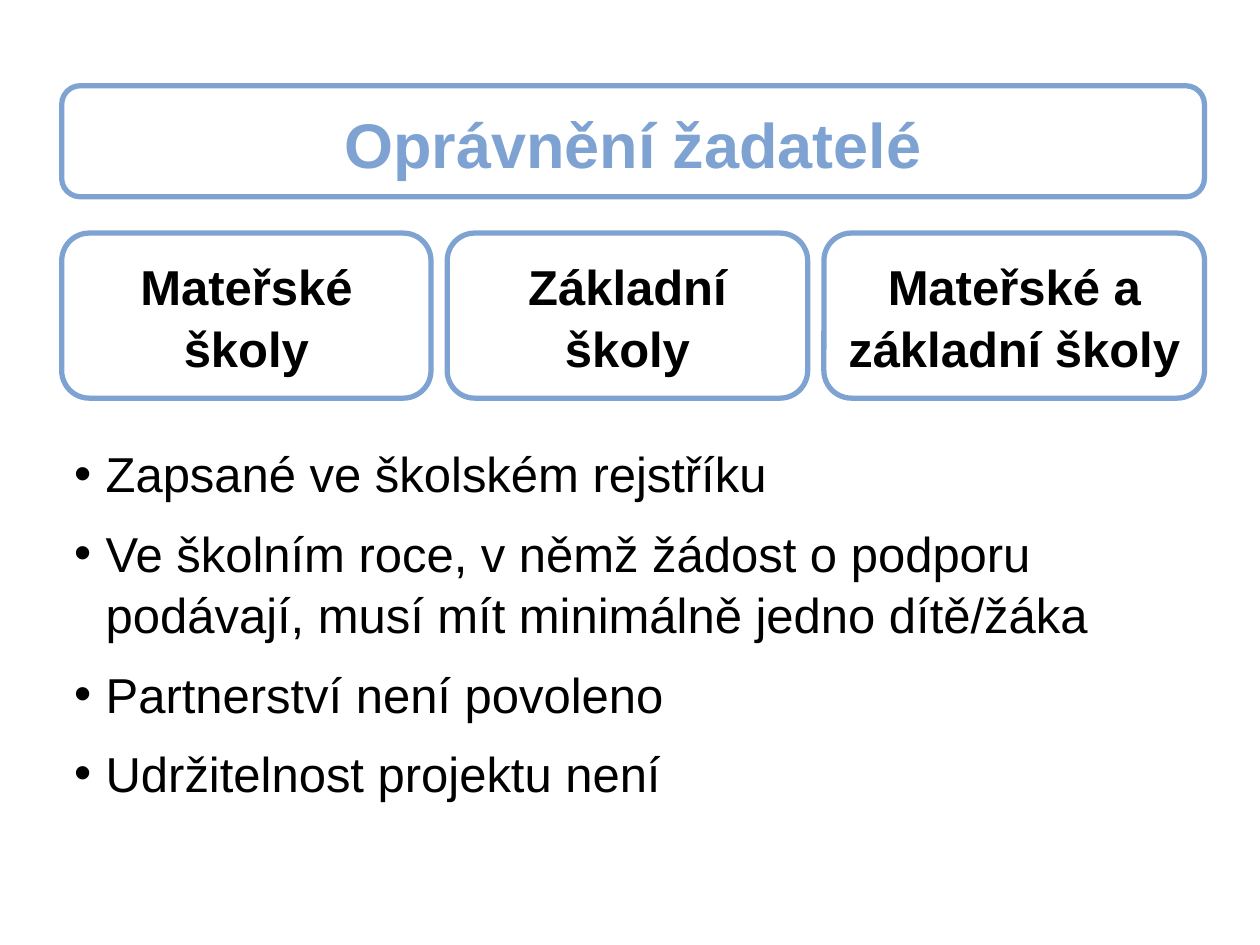
from pptx import Presentation
from pptx.dml.color import RGBColor
from pptx.enum.shapes import MSO_SHAPE
from pptx.enum.text import MSO_ANCHOR, PP_ALIGN
from pptx.oxml.ns import qn
from pptx.util import Pt
from lxml import etree

ROUNDED = MSO_SHAPE.ROUNDED_RECTANGLE
MIDDLE = MSO_ANCHOR.MIDDLE
CENTER = PP_ALIGN.CENTER

# Content
TITLE = "Oprávnění žadatelé"
SCHOOLS = [  # name, card width
    ("Mateřské školy", 211),
    ("Základní školy", 206),
    ("Mateřské a základní školy", 217.5),
]
CONDITIONS = [
    "Zapsané ve školském rejstříku",
    "Ve školním roce, v němž žádost o podporu podávají, musí mít minimálně jedno dítě/žáka",
    "Partnerství není povoleno",
    "Udržitelnost projektu není",
]

# Layout and style, in points
LEFT, WIDTH, CARD_GAP = 35.3, 653, 9.25
INDENT = 18
BLUE, BLACK, WHITE = "7EA2D1", "000000", "FFFFFF"


def color(hex_value):
    return RGBColor.from_string(hex_value)


def style(paragraph, size, hex_value, bold=False):
    paragraph.line_spacing = 1.05
    font = paragraph.font
    font.name, font.size, font.bold = "Arial", Pt(size), bold
    font.color.rgb = color(hex_value)


def add_card(slide, text, left, top, width, height, size, hex_value):
    card = slide.shapes.add_shape(ROUNDED, Pt(left), Pt(top), Pt(width), Pt(height))
    card.shadow.inherit = False
    card.fill.solid()
    card.fill.fore_color.rgb = color(WHITE)
    card.line.color.rgb = color(BLUE)
    card.line.width = Pt(3)
    frame = card.text_frame
    frame.word_wrap = True
    frame.vertical_anchor = MIDDLE
    paragraph = frame.paragraphs[0]
    paragraph.text = text
    paragraph.alignment = CENTER
    style(paragraph, size, hex_value, bold=True)


def add_bullet(paragraph):
    properties = paragraph._p.get_or_add_pPr()
    properties.set("marL", str(Pt(INDENT)))
    properties.set("indent", str(-Pt(INDENT)))
    etree.SubElement(properties, qn("a:buFont"), typeface="Arial")
    etree.SubElement(properties, qn("a:buChar"), char="•")


def main():
    presentation = Presentation()
    presentation.slide_width, presentation.slide_height = Pt(720), Pt(540)
    slide = presentation.slides.add_slide(presentation.slide_layouts[6])

    # Title
    add_card(slide, TITLE, LEFT, 49, WIDTH, 63.4, 36, BLUE)

    # Row of school types
    left = LEFT
    for school, width in SCHOOLS:
        add_card(slide, school, left, 133.2, width, 94.3, 28, BLACK)
        left += width + CARD_GAP

    # Conditions
    conditions = slide.shapes.add_textbox(Pt(LEFT), Pt(248.4), Pt(661), Pt(211.7))
    frame = conditions.text_frame
    frame.word_wrap = True
    for index, condition in enumerate(CONDITIONS):
        paragraph = frame.add_paragraph() if index else frame.paragraphs[0]
        paragraph.text = condition
        add_bullet(paragraph)
        style(paragraph, 28, BLACK)
        if index:
            paragraph.space_before = Pt(10)

    presentation.save("out.pptx")


if __name__ == "__main__":
    main()
